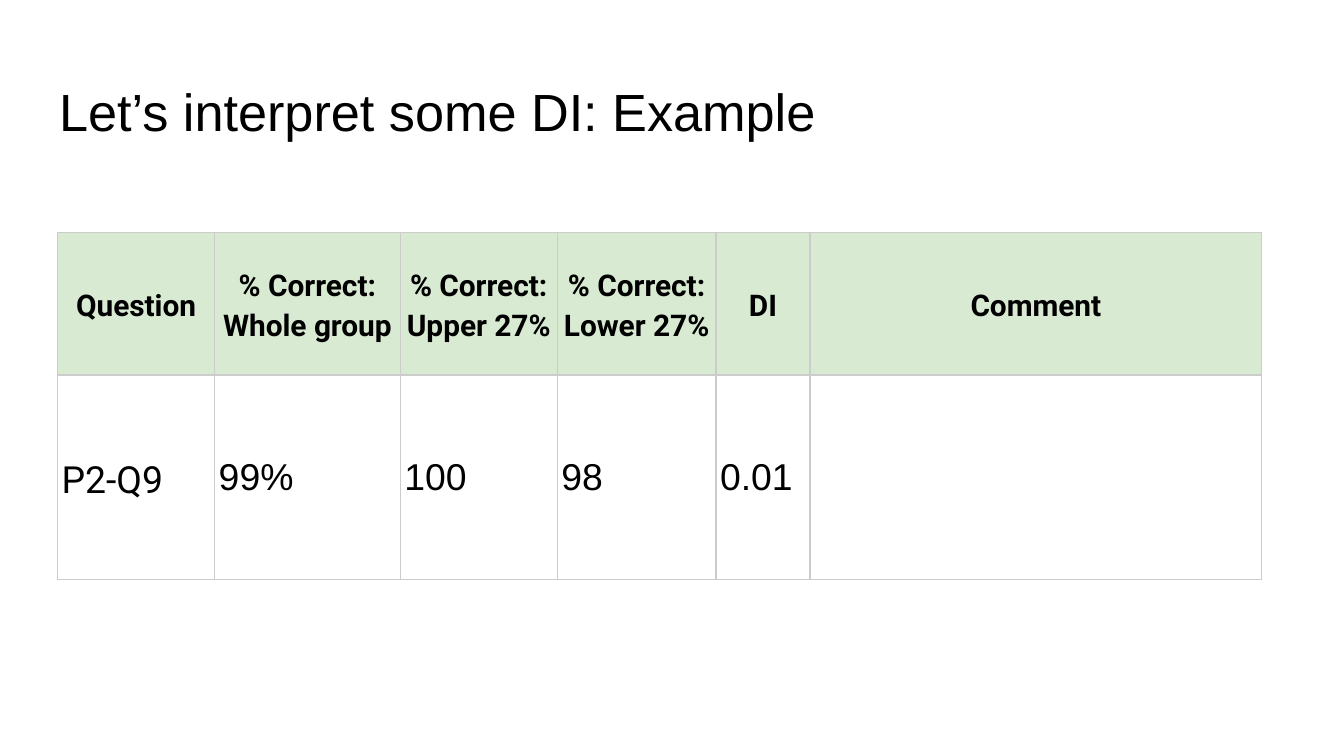
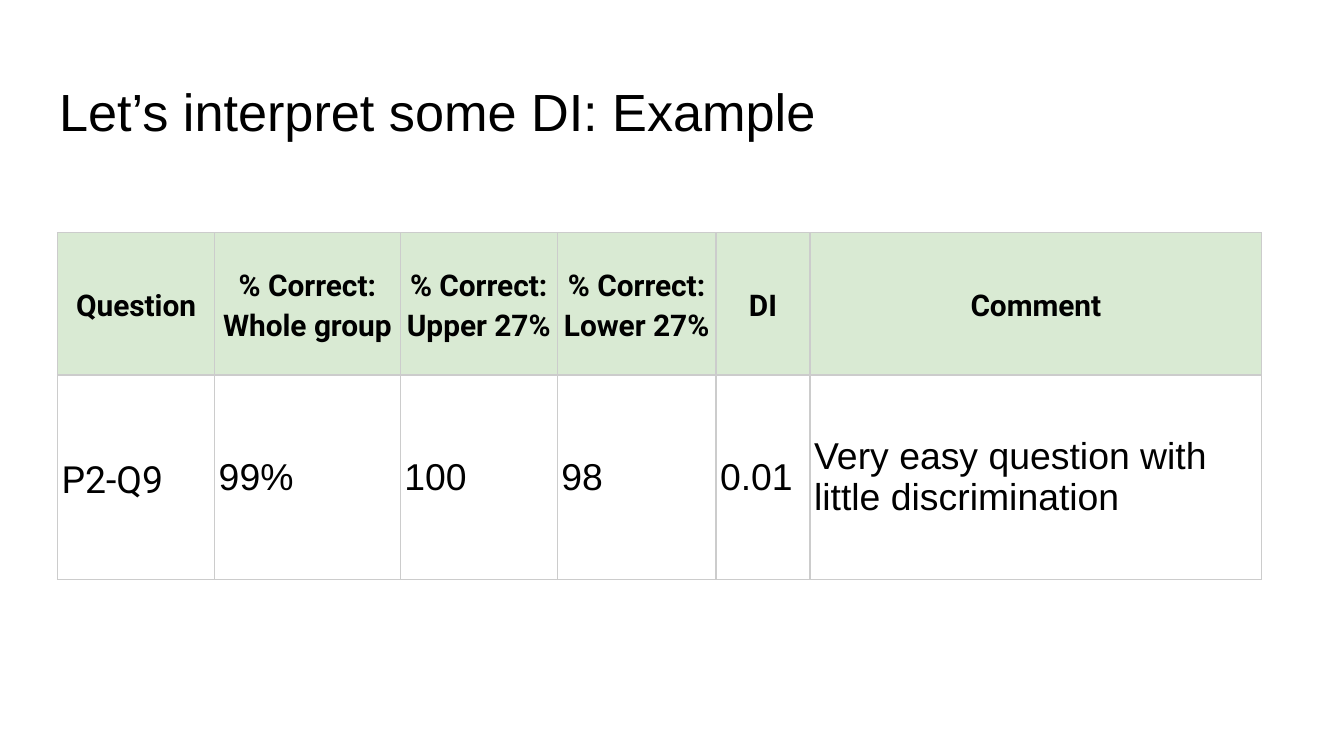
"""Build two slides that interpret a discrimination index (DI) example."""
from lxml import etree
from pptx import Presentation
from pptx.dml.color import RGBColor
from pptx.enum.text import MSO_ANCHOR, MSO_AUTO_SIZE, PP_ALIGN
from pptx.oxml.ns import qn
from pptx.util import Pt

TOP, MIDDLE = MSO_ANCHOR.TOP, MSO_ANCHOR.MIDDLE
LEFT, CENTER = PP_ALIGN.LEFT, PP_ALIGN.CENTER
NO_AUTOFIT = MSO_AUTO_SIZE.NONE

THEME = {
    "ink": RGBColor.from_string("000000"),
    "header": RGBColor.from_string("D9EAD3"),
    "rule": "CCCCCC",
    "rule_width": Pt(0.75),
    "font": "Arial",
    "label_font": "Roboto",
    "title_size": Pt(28),
    "header_size": Pt(16),
    "value_size": Pt(20),
}

TITLE = "Let’s interpret some DI: Example"
HEADINGS = ["Question", "% Correct: Whole group", "% Correct: Upper 27%",
            "% Correct: Lower 27%", "DI", "Comment"]
RESULTS = ["P2-Q9", "99%", "100", "98", "0.01"]
COMMENTS = ["", "Very easy question with little discrimination"]
COLUMN_WIDTHS = [84.2, 99.4, 84.2, 85, 50.4, 242]
ROW_HEIGHTS = [76.3, 109.4]

TITLE_FORMAT = {"left": Pt(24.5), "top": Pt(35), "width": Pt(671), "height": Pt(45)}
TITLE_FRAME = {"word_wrap": True, "auto_size": NO_AUTOFIT, "vertical_anchor": TOP,
               "margin_left": Pt(7.2), "margin_right": Pt(7.2),
               "margin_top": Pt(7.2), "margin_bottom": Pt(7.2)}
CELL_FORMAT = {"vertical_anchor": MIDDLE, "margin_left": Pt(2.2), "margin_right": Pt(2.2),
               "margin_top": Pt(2.2), "margin_bottom": Pt(2.2)}
TABLE_FORMAT = {"first_row": False, "horz_banding": False}


def apply_format(target, values):
    for attribute, value in values.items():
        setattr(target, attribute, value)


def write(frame, text, font, size, bold=False, align=LEFT, spacing=1.0):
    frame.text = text
    paragraph = frame.paragraphs[0]
    apply_format(paragraph, {"alignment": align, "line_spacing": spacing})
    for run in paragraph.runs:
        apply_format(run.font, {"name": font, "size": size, "bold": bold})
        run.font.color.rgb = THEME["ink"]


deck = Presentation()
apply_format(deck, {"slide_width": Pt(720), "slide_height": Pt(405)})
title_only = deck.slide_layouts[5]

for comment in COMMENTS:
    slide = deck.slides.add_slide(title_only)
    heading = slide.shapes.title
    apply_format(heading, TITLE_FORMAT)
    apply_format(heading.text_frame, TITLE_FRAME)
    write(heading.text_frame, TITLE, THEME["font"], THEME["title_size"])

    table = slide.shapes.add_table(
        len(ROW_HEIGHTS), len(HEADINGS), Pt(30.8), Pt(124.6),
        Pt(sum(COLUMN_WIDTHS)), Pt(sum(ROW_HEIGHTS))).table
    apply_format(table, TABLE_FORMAT)
    for column, width in zip(table.columns, COLUMN_WIDTHS):
        column.width = Pt(width)
    for row, height in zip(table.rows, ROW_HEIGHTS):
        row.height = Pt(height)

    for cell in table.iter_cells():
        apply_format(cell, CELL_FORMAT)
        properties = cell._tc.get_or_add_tcPr()
        for side in ("a:lnL", "a:lnR", "a:lnT", "a:lnB"):
            border = etree.SubElement(properties, qn(side), w=str(THEME["rule_width"]))
            fill = etree.SubElement(border, qn("a:solidFill"))
            etree.SubElement(fill, qn("a:srgbClr"), val=THEME["rule"])

    for index, label in enumerate(HEADINGS):
        cell = table.cell(0, index)
        cell.fill.solid()
        cell.fill.fore_color.rgb = THEME["header"]
        write(cell.text_frame, label, THEME["label_font"], THEME["header_size"],
              bold=True, align=CENTER, spacing=1.15)

    for index, value in enumerate(RESULTS + [comment]):
        cell = table.cell(1, index)
        cell.fill.background()
        font, spacing = (THEME["font"], 1.0) if index else (THEME["label_font"], 1.15)
        write(cell.text_frame, value, font, THEME["value_size"], spacing=spacing)

deck.save("out.pptx")
